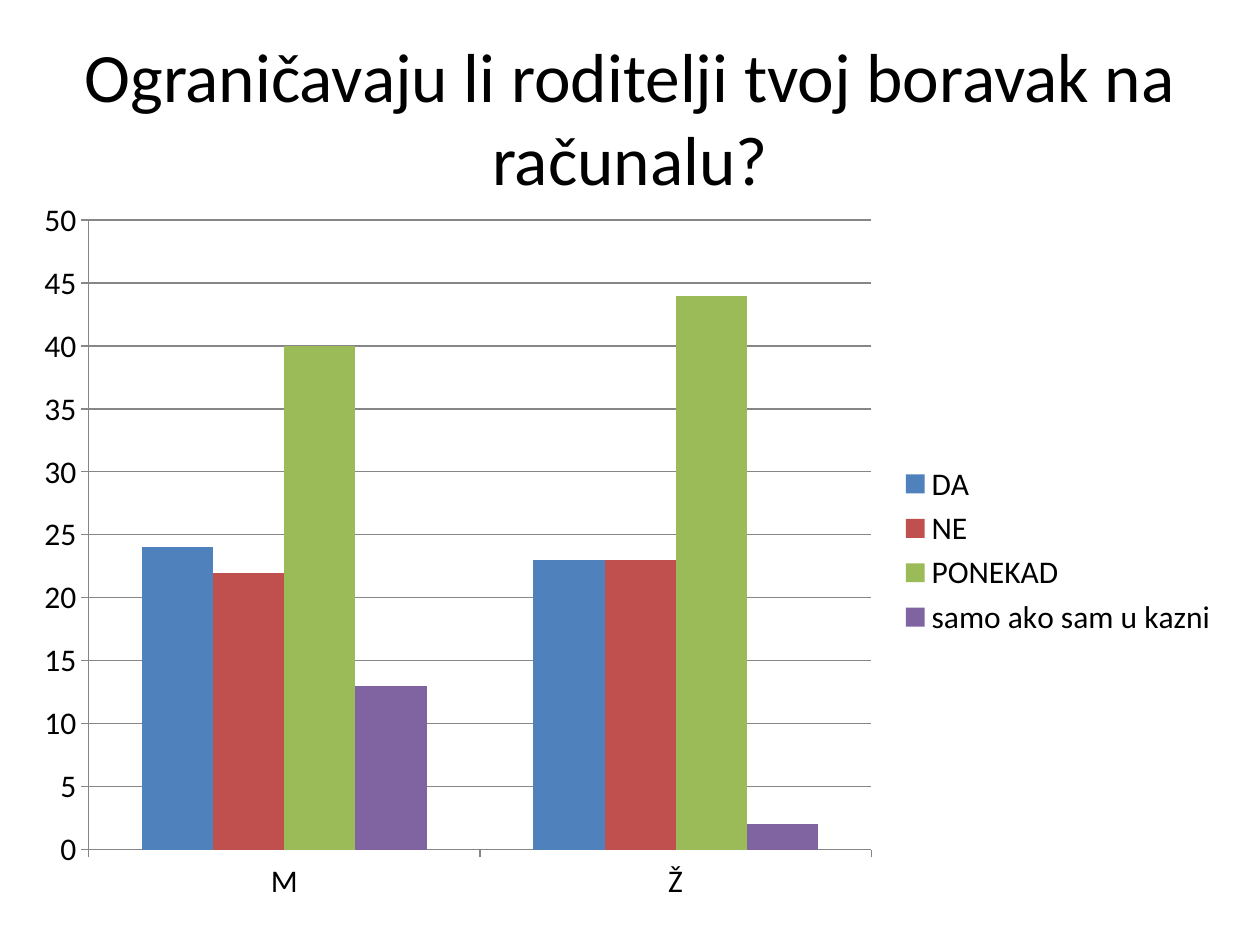
import dataclasses

import pptx
import pptx.chart.data
import pptx.dml.color
import pptx.enum.chart
import pptx.enum.text
import pptx.util

Inches = pptx.util.Inches
Pt = pptx.util.Pt


@dataclasses.dataclass(frozen=True)
class Theme:
    font: str = "Calibri"
    text: str = "000000"
    grid: str = "868686"
    title_size: float = 39.6
    chart_size: float = 18
    line_width: float = 0.75


THEME = Theme()
GENDERS = ["M", "Ž"]
ANSWERS = [
    ("DA", (24, 23), "4F81BD"),
    ("NE", (22, 23), "C0504D"),
    ("PONEKAD", (40, 44), "9BBB59"),
    ("samo ako sam u kazni", (13, 2), "8064A2"),
]


def rgb(value):
    return pptx.dml.color.RGBColor.from_string(value)


def apply(target, values):
    for name, value in values.items():
        setattr(target, name, value)


def style_font(font, size):
    apply(font, {"name": THEME.font, "size": Pt(size), "bold": False})
    font.color.rgb = rgb(THEME.text)


def style_line(line):
    line.color.rgb = rgb(THEME.grid)
    line.width = Pt(THEME.line_width)


def add_title(slide, question):
    title = slide.shapes.title
    apply(title, {"left": Inches(0.5), "top": Inches(0.3),
                  "width": Inches(9), "height": Inches(1.25)})
    frame = title.text_frame
    frame.text = question
    apply(frame, {"word_wrap": True,
                  "auto_size": pptx.enum.text.MSO_AUTO_SIZE.NONE,
                  "vertical_anchor": pptx.enum.text.MSO_ANCHOR.MIDDLE})
    paragraph = frame.paragraphs[0]
    paragraph.alignment = pptx.enum.text.PP_ALIGN.CENTER
    style_font(paragraph.runs[0].font, THEME.title_size)


def style_axis(axis):
    apply(axis, {"major_tick_mark": pptx.enum.chart.XL_TICK_MARK.OUTSIDE,
                 "minor_tick_mark": pptx.enum.chart.XL_TICK_MARK.NONE})
    style_line(axis.format.line)


def add_answer_chart(slide):
    survey = pptx.chart.data.CategoryChartData()
    survey.categories = GENDERS
    for answer, shares, _ in ANSWERS:
        survey.add_series(answer, shares)
    chart = slide.shapes.add_chart(
        pptx.enum.chart.XL_CHART_TYPE.COLUMN_CLUSTERED,
        Inches(0.16), Inches(1.48), Inches(9.61), Inches(5.78), survey).chart
    apply(chart, {"has_title": False, "has_legend": True})
    apply(chart.legend, {"position": pptx.enum.chart.XL_LEGEND_POSITION.RIGHT,
                         "include_in_layout": False})
    style_font(chart.font, THEME.chart_size)

    bars = chart.plots[0]
    apply(bars, {"gap_width": 150, "overlap": 0, "vary_by_categories": False})
    for series, (_, _, color) in zip(bars.series, ANSWERS):
        series.format.fill.solid()
        series.format.fill.fore_color.rgb = rgb(color)

    style_axis(chart.category_axis)
    shares_axis = chart.value_axis
    style_axis(shares_axis)
    apply(shares_axis, {"minimum_scale": 0, "maximum_scale": 50,
                        "major_unit": 5, "has_major_gridlines": True})
    style_line(shares_axis.major_gridlines.format.line)


def main():
    deck = pptx.Presentation()
    apply(deck, {"slide_width": Inches(10), "slide_height": Inches(7.5)})
    slide = deck.slides.add_slide(deck.slide_layouts[5])
    add_title(slide, "Ograničavaju li roditelji tvoj boravak na računalu?")
    add_answer_chart(slide)
    deck.save("out.pptx")


if __name__ == "__main__":
    main()
